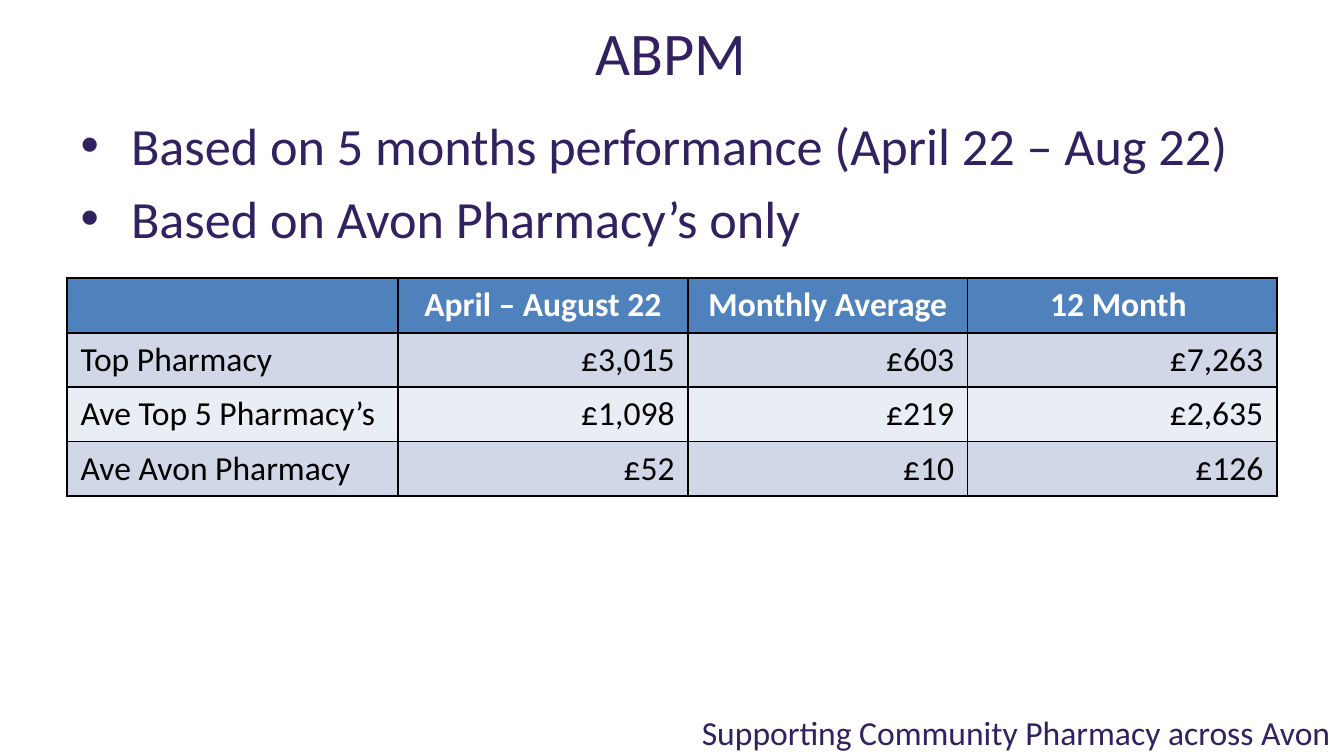
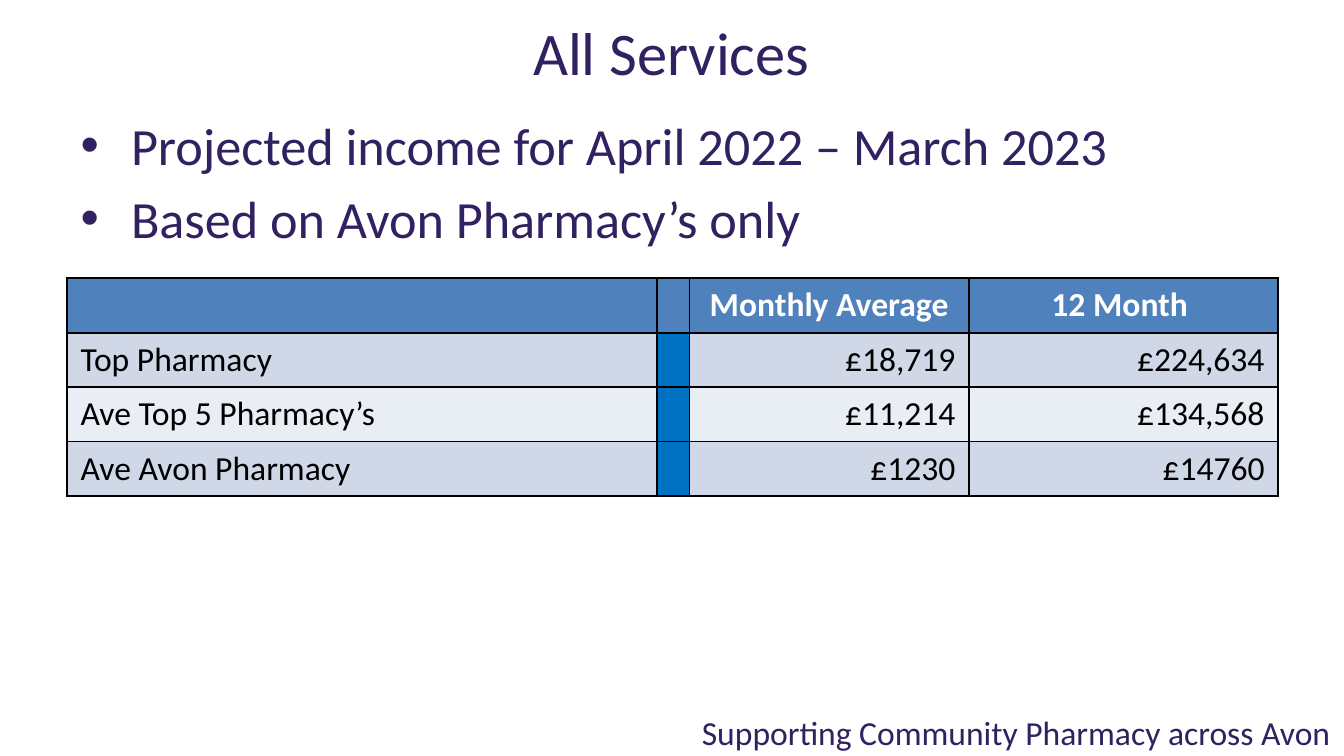
from lxml import etree
from pptx import Presentation
from pptx.dml.color import RGBColor
from pptx.enum.text import MSO_ANCHOR, MSO_AUTO_SIZE, PP_ALIGN
from pptx.oxml.ns import qn
from pptx.util import Inches, Pt

FONT = "Calibri"
PURPLE = RGBColor(0x31, 0x21, 0x60)
BLACK = RGBColor(0x00, 0x00, 0x00)
WHITE = RGBColor(0xFF, 0xFF, 0xFF)
HEADER_BLUE = RGBColor(0x4F, 0x81, 0xBD)
DIVIDER_BLUE = RGBColor(0x00, 0x70, 0xC0)
BANDS = (RGBColor(0xD0, 0xD8, 0xE8), RGBColor(0xE9, 0xED, 0xF4))

SLIDE_WIDTH = 10
SLIDE_HEIGHT = SLIDE_WIDTH * 9 / 16
TABLE_HEIGHT = 1.62
FOOTER = "Supporting Community Pharmacy across Avon"

SLIDES = [
    {
        "title": "ABPM",
        "bullets": ["Based on 5 months performance (April 22 – Aug 22)",
                    "Based on Avon Pharmacy’s only"],
        "widths": [2.46, 2.16, 2.08, 2.3],
        "divider": None,
        "rows": [
            ["", "April – August 22", "Monthly Average", "12 Month "],
            ["Top Pharmacy", "£3,015", "£603", "£7,263"],
            ["Ave Top 5 Pharmacy’s", "£1,098", "£219", "£2,635"],
            ["Ave Avon Pharmacy", "£52", "£10", "£126"],
        ],
    },
    {
        "title": "All Services",
        "bullets": ["Projected income for April 2022 – March 2023",
                    "Based on Avon Pharmacy’s only"],
        "widths": [4.39, 0.24, 2.08, 2.3],
        "divider": 1,
        "rows": [
            ["", "", "Monthly Average", "12 Month "],
            ["Top Pharmacy", "", "£18,719", "£224,634"],
            ["Ave Top 5 Pharmacy’s", "", "£11,214", "£134,568"],
            ["Ave Avon Pharmacy", "", "£1230", "£14760"],
        ],
    },
]


def place(shape, left, top, width, height):
    shape.left, shape.top = Inches(left), Inches(top)
    shape.width, shape.height = Inches(width), Inches(height)


def format_paragraph(paragraph, size, color, align, bold=False):
    paragraph.alignment = align
    for run in paragraph.runs:
        run.font.name = FONT
        run.font.size = Pt(size)
        run.font.color.rgb = color
        run.font.bold = bold


def set_line_text(shape, text, size, align):
    """Fill a shape with one vertically centred line."""
    frame = shape.text_frame
    frame.text = text
    frame.word_wrap = True
    frame.auto_size = MSO_AUTO_SIZE.NONE
    frame.vertical_anchor = MSO_ANCHOR.MIDDLE
    format_paragraph(frame.paragraphs[0], size, PURPLE, align)


def add_footer(slide):
    footer = slide.shapes.add_textbox(
        Inches(2.7), Inches(5.3), Inches(7.3), Inches(0.3))
    set_line_text(footer, FOOTER, 18, PP_ALIGN.RIGHT)


def fill_bullets(body, bullets):
    place(body, 0.5, 0.79, 9, 3.97)
    frame = body.text_frame
    frame.text = "\n".join(bullets)
    frame.auto_size = MSO_AUTO_SIZE.NONE
    for index, paragraph in enumerate(frame.paragraphs):
        paragraph.space_before = Pt(5.6 if index else 0)
        format_paragraph(paragraph, 28, PURPLE, PP_ALIGN.LEFT)


def add_borders(cell):
    """Draw 1 pt black lines; borders must precede the fill in the cell XML."""
    properties = cell._tc.get_or_add_tcPr()
    for index, side in enumerate(("lnL", "lnR", "lnT", "lnB")):
        line = etree.Element(qn(f"a:{side}"), w=str(Pt(1)))
        fill = etree.SubElement(line, qn("a:solidFill"))
        etree.SubElement(fill, qn("a:srgbClr"), val=str(BLACK))
        properties.insert(index, line)


def cell_fill(row, column, divider):
    if row == 0:
        return HEADER_BLUE
    if column == divider:
        return DIVIDER_BLUE
    return BANDS[(row - 1) % 2]


def cell_align(row, column):
    if row == 0:
        return PP_ALIGN.CENTER
    return PP_ALIGN.RIGHT if column else PP_ALIGN.LEFT


def add_income_table(slide, rows, widths, divider):
    table = slide.shapes.add_table(
        len(rows), len(widths), Inches(0.5), Inches(2.07),
        Inches(sum(widths)), Inches(TABLE_HEIGHT)).table
    for column, width in zip(table.columns, widths):
        column.width = Inches(width)
    for row_index, values in enumerate(rows):
        is_header = row_index == 0
        for column_index, value in enumerate(values):
            cell = table.cell(row_index, column_index)
            cell.text = value
            cell.fill.solid()
            cell.fill.fore_color.rgb = cell_fill(row_index, column_index, divider)
            add_borders(cell)
            format_paragraph(cell.text_frame.paragraphs[0], 18,
                             WHITE if is_header else BLACK,
                             cell_align(row_index, column_index), is_header)


def add_income_slide(presentation, content):
    slide = presentation.slides.add_slide(presentation.slide_layouts[1])
    add_footer(slide)
    title = slide.shapes.title
    place(title, 1.38, 0.05, 7.23, 0.66)
    set_line_text(title, content["title"], 32.4, PP_ALIGN.CENTER)
    fill_bullets(slide.placeholders[1], content["bullets"])
    add_income_table(slide, content["rows"], content["widths"], content["divider"])


def main():
    presentation = Presentation()
    presentation.slide_width = Inches(SLIDE_WIDTH)
    presentation.slide_height = Inches(SLIDE_HEIGHT)
    for content in SLIDES:
        add_income_slide(presentation, content)
    presentation.save("out.pptx")


if __name__ == "__main__":
    main()
